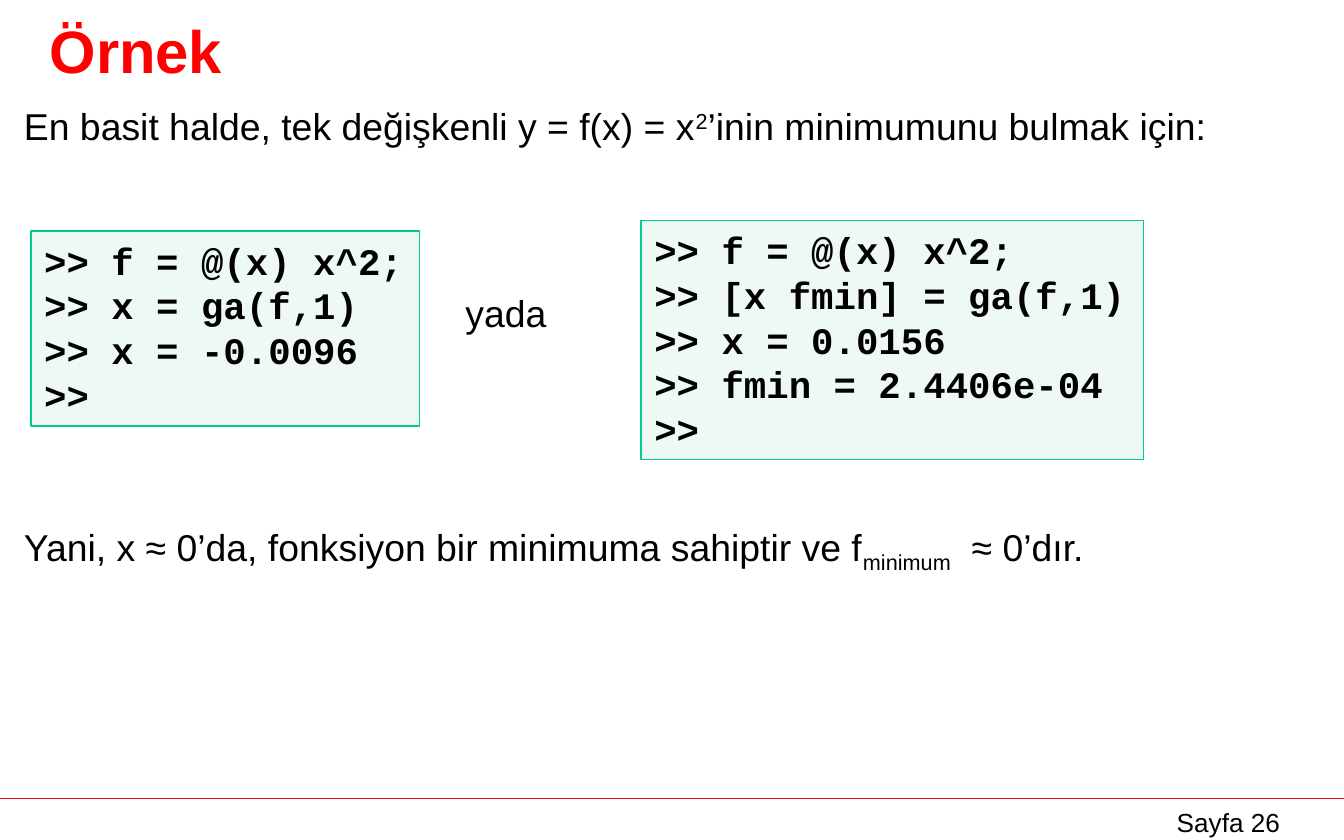
from pptx import Presentation
from pptx.dml.color import RGBColor
from pptx.enum.shapes import MSO_CONNECTOR, MSO_SHAPE
from pptx.enum.text import MSO_ANCHOR, PP_ALIGN
from pptx.oxml.ns import qn
from pptx.util import Inches, Pt
from lxml import etree

RED = RGBColor(0xFF, 0x00, 0x00)
BLACK = RGBColor(0x00, 0x00, 0x00)
MINT = RGBColor(0xEE, 0xF9, 0xF4)
GREEN = RGBColor(0x00, 0xCC, 0x99)
LEFT, CENTER = PP_ALIGN.LEFT, PP_ALIGN.CENTER
TOP, MIDDLE = MSO_ANCHOR.TOP, MSO_ANCHOR.MIDDLE

# Content: each paragraph is a list of (text, baseline shift in percent)
TITLE = "Örnek"
BODY = [
    [("En basit halde, tek değişkenli y = f(x) = x", 0), ("2", 30),
     ("’inin minimumunu bulmak için:", 0)],
    [("Yani, x ≈ 0’da, fonksiyon bir minimuma sahiptir ve f", 0),
     ("minimum", -25), ("  ≈ 0’dır.", 0)],
]
CODE_GAP = Pt(201.5)  # room for the code boxes between the two sentences
CODE_BOXES = [
    ((0.23, 1.72, 2.89, 1.45),
     [">> f = @(x) x^2;", ">> x = ga(f,1)", ">> x = -0.0096", ">>"]),
    ((4.77, 1.64, 3.74, 1.78),
     [">> f = @(x) x^2;", ">> [x fmin] = ga(f,1)", ">> x = 0.0156",
      ">> fmin = 2.4406e-04", ">>"]),
]
OR_WORD = "yada"
PAGE_LABEL = "Sayfa 26"


def write(shape, paragraphs, size=20, font="Arial", color=BLACK, bold=False,
          align=LEFT, anchor=TOP, wrap=True):
    frame = shape.text_frame
    frame.word_wrap = wrap
    frame.vertical_anchor = anchor
    for index, runs in enumerate(paragraphs):
        paragraph = frame.paragraphs[0] if index == 0 else frame.add_paragraph()
        paragraph.alignment = align
        paragraph.font.size = Pt(size)
        paragraph.font.name = font
        paragraph.font.bold = bold
        paragraph.font.color.rgb = color
        for text, shift in runs:
            run = paragraph.add_run()
            run.text = text
            if shift:
                run._r.get_or_add_rPr().set("baseline", str(shift * 1000))


def plain(*lines):
    return [[(line, 0)] for line in lines]


def add_text(slide, box, paragraphs, **style):
    shape = slide.shapes.add_textbox(*map(Inches, box))
    write(shape, paragraphs, **style)
    return shape


def add_code(slide, box, lines):
    shape = slide.shapes.add_shape(MSO_SHAPE.RECTANGLE, *map(Inches, box))
    shape.shadow.inherit = False
    shape.fill.solid()
    shape.fill.fore_color.rgb = MINT
    shape.line.color.rgb = GREEN
    shape.line.width = Pt(0.75)
    write(shape, plain(*lines), font="Courier New", bold=True, wrap=False)


def main():
    presentation = Presentation()
    presentation.slide_width = Inches(10)
    presentation.slide_height = Inches(6.25)
    slide = presentation.slides.add_slide(presentation.slide_layouts[6])

    # Footer rule and page label
    rule = slide.shapes.add_connector(
        MSO_CONNECTOR.STRAIGHT, 0, Inches(5.94), Inches(10), Inches(5.94))
    rule.line.color.rgb = RED
    rule.line.width = Pt(0.75)
    etree.SubElement(rule._element.spPr, qn("a:effectLst"))
    add_text(slide, (8.39, 5.95, 1.5, 0.26), plain(PAGE_LABEL),
             size=14, align=CENTER)

    # Title and sentences
    add_text(slide, (0.27, 0.04, 9.21, 0.66), plain(TITLE),
             size=32, color=RED, bold=True, anchor=MIDDLE)
    body = add_text(slide, (0.08, 0.72, 9.53, 5.14), BODY)
    body.text_frame.paragraphs[1].space_before = CODE_GAP

    # The two code variants with the word between them
    for box, lines in CODE_BOXES:
        add_code(slide, box, lines)
    add_text(slide, (3.36, 2.11, 0.81, 0.44), plain(OR_WORD),
             align=CENTER, wrap=False)

    presentation.save("out.pptx")


if __name__ == "__main__":
    main()
